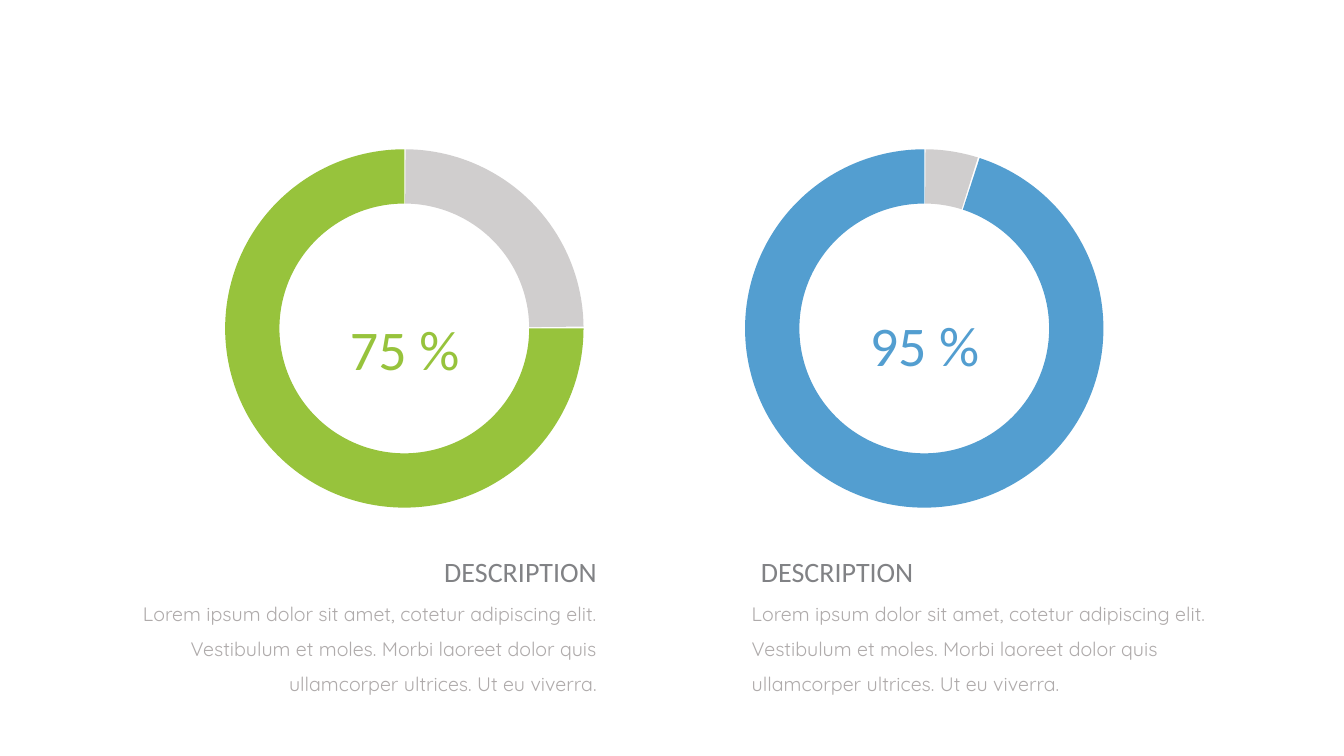
from dataclasses import dataclass

from pptx import Presentation
from pptx.dml.color import RGBColor
from pptx.enum.shapes import MSO_SHAPE
from pptx.enum.text import MSO_ANCHOR, PP_ALIGN
from pptx.util import Pt

LEFT, CENTER, RIGHT = PP_ALIGN.LEFT, PP_ALIGN.CENTER, PP_ALIGN.RIGHT
MIDDLE = MSO_ANCHOR.MIDDLE
BLOCK_ARC = MSO_SHAPE.BLOCK_ARC


@dataclass(frozen=True)
class Theme:
    green: str = "97C33C"
    blue: str = "539ED0"
    track: str = "D0CECE"
    heading: str = "818285"
    body: str = "AFABAB"
    main_font: str = "Calibri"
    body_font: str = "Quicksand"
    value_size: int = 40
    heading_size: int = 20
    body_size: int = 14


THEME = Theme()
BLANK_LAYOUT = 6

# Ring geometry, in points and degrees clockwise from the top
RING_Y, OUTER, INNER = 234.6, 128, 89.2
GAP = 0.4
ANGLE_UNIT = 0.6  # adjustment value per degree

BODY_TEXT = (
    "Lorem ipsum dolor sit amet, cotetur adipiscing elit. Vestibulum et moles. "
    "Morbi laoreet dolor quis ullamcorper ultrices. Ut eu viverra."
)


def add_segment(s, cx, start, end, color):
    sp = s.shapes.add_shape(BLOCK_ARC, Pt(cx - OUTER), Pt(RING_Y - OUTER),
                            Pt(2 * OUTER), Pt(2 * OUTER))
    # Block arc angles count from three o'clock
    for i, angle in enumerate((start, end)):
        sp.adjustments[i] = (angle + 270) % 360 * ANGLE_UNIT
    sp.adjustments[2] = (OUTER - INNER) / (2 * OUTER)
    sp.shadow.inherit = False
    sp.fill.solid()
    sp.fill.fore_color.rgb = RGBColor.from_string(color)
    sp.line.fill.background()


def add_ring(s, cx, percent, color):
    """Grey remainder first, then the coloured share."""
    split = 360 * (100 - percent) / 100
    add_segment(s, cx, GAP, split - 1.5 * GAP, THEME.track)
    add_segment(s, cx, split, 360, color)


def add_text(s, box, text, align, size, color, font):
    tf = s.shapes.add_textbox(*map(Pt, box)).text_frame
    for name, value in {"word_wrap": True, "vertical_anchor": MIDDLE}.items():
        setattr(tf, name, value)
    p = tf.paragraphs[0]
    for name, value in {"alignment": align, "line_spacing": 1.5}.items():
        setattr(p, name, value)
    r = p.add_run()
    r.text = text
    for name, value in {"size": Pt(size), "name": font}.items():
        setattr(r.font, name, value)
    r.font.color.rgb = RGBColor.from_string(color)


def add_panel(s, cx, percent, color, value_y, heading_x, body_x, align):
    t = THEME
    add_ring(s, cx, percent, color)
    add_text(s, (cx - 81.7, value_y, 163.8, 66.2), f"{percent} %",
             CENTER, t.value_size, color, t.main_font)
    add_text(s, (body_x, 416.2, 362.2, 85.7), BODY_TEXT,
             align, t.body_size, t.body, t.body_font)
    add_text(s, (heading_x, 380.9, 188.6, 42.5), "DESCRIPTION",
             align, t.heading_size, t.heading, t.main_font)


def main():
    prs = Presentation()
    prs.slide_width, prs.slide_height = Pt(960), Pt(540)
    s = prs.slides.add_slide(prs.slide_layouts[BLANK_LAYOUT])

    # Left and right panels
    add_panel(s, 288.8, 75, THEME.green, 203.8, 244.8, 71.3, RIGHT)
    add_panel(s, 660.2, 95, THEME.blue, 200.9, 536.4, 529.9, LEFT)

    prs.save("out.pptx")


if __name__ == "__main__":
    main()
